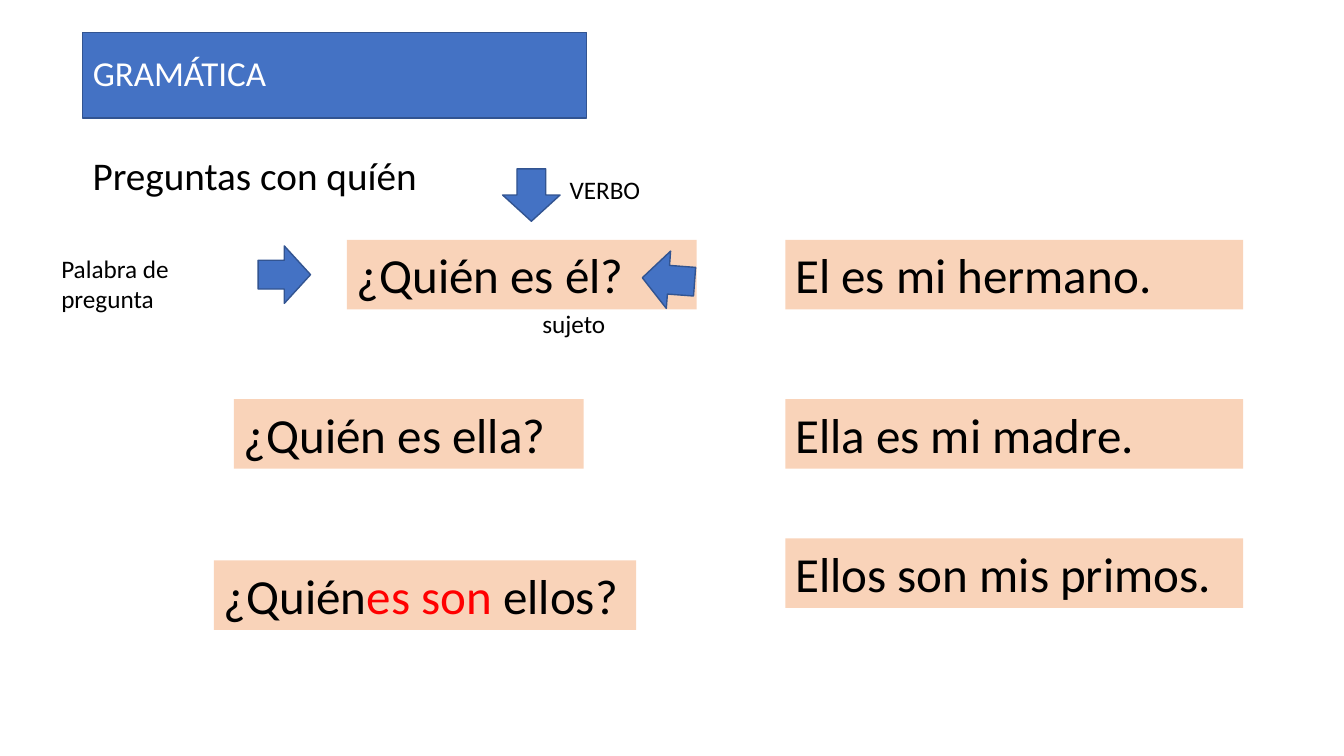
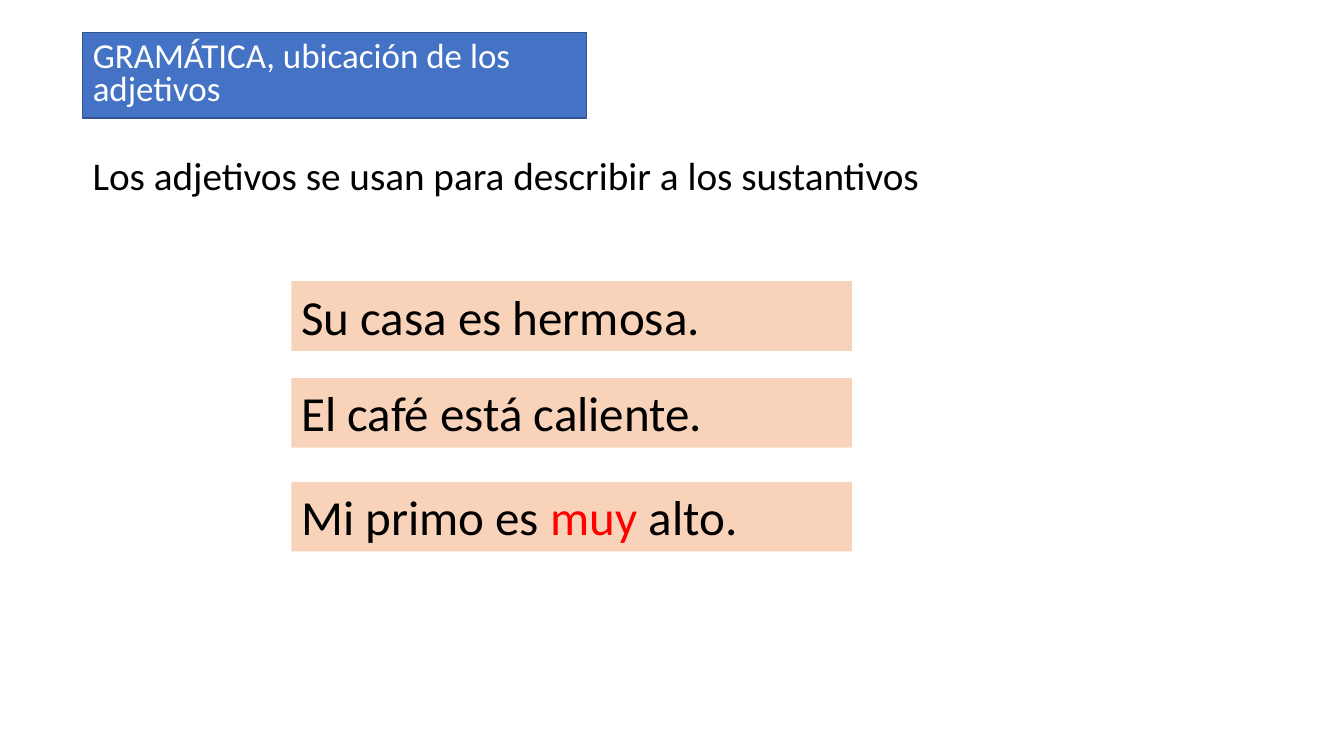
from dataclasses import dataclass

from pptx import Presentation
from pptx.dml.color import RGBColor
from pptx.enum.shapes import MSO_SHAPE
from pptx.enum.text import MSO_ANCHOR, MSO_AUTO_SIZE, PP_ALIGN
from pptx.util import Inches, Pt

RECTANGLE = MSO_SHAPE.RECTANGLE
RIGHT_ARROW = MSO_SHAPE.RIGHT_ARROW
TOP, MIDDLE = MSO_ANCHOR.TOP, MSO_ANCHOR.MIDDLE
LEFT = PP_ALIGN.LEFT
NO_AUTOFIT = MSO_AUTO_SIZE.NONE
TITLE_ONLY = 5


@dataclass(frozen=True)
class Theme:
    font: str = "Calibri"
    blue: RGBColor = RGBColor(0x44, 0x72, 0xC4)
    outline: RGBColor = RGBColor(0x32, 0x54, 0x91)
    peach: RGBColor = RGBColor(0xF9, 0xD3, 0xB9)
    black: RGBColor = RGBColor(0, 0, 0)
    white: RGBColor = RGBColor(0xFF, 0xFF, 0xFF)
    red: RGBColor = RGBColor(0xFF, 0, 0)
    title_size: int = 25
    topic_size: int = 28
    sentence_size: int = 35
    label_size: int = 18


THEME = Theme()
SENTENCE_HEIGHT = 0.69


def write(shape, runs, size, anchor=TOP, line_spacing=1.0):
    frame = shape.text_frame
    frame.word_wrap = True
    frame.auto_size = NO_AUTOFIT
    frame.vertical_anchor = anchor
    paragraph = frame.paragraphs[0]
    paragraph.alignment = LEFT
    paragraph.line_spacing = line_spacing
    for text, color in runs:
        run = paragraph.add_run()
        run.text = text
        run.font.name = THEME.font
        run.font.size = Pt(size)
        run.font.color.rgb = color


def paint_blue(shape):
    shape.fill.solid()
    shape.fill.fore_color.rgb = THEME.blue
    shape.line.color.rgb = THEME.outline
    shape.line.width = Pt(1)


def add_text(slide, text, box, size, line_spacing=1.0):
    text_box = slide.shapes.add_textbox(*map(Inches, box))
    write(text_box, [(text, THEME.black)], size, line_spacing=line_spacing)


def add_label(slide, text, left, top, width=1.11, height=0.4):
    add_text(slide, text, (left, top, width, height), THEME.label_size)


def add_sentence(slide, left, top, width, start, stressed="", end=""):
    box = map(Inches, (left, top, width, SENTENCE_HEIGHT))
    panel = slide.shapes.add_shape(RECTANGLE, *box)
    panel.shadow.inherit = False
    panel.fill.solid()
    panel.fill.fore_color.rgb = THEME.peach
    panel.line.fill.background()
    parts = [(start, THEME.black), (stressed, THEME.red), (end, THEME.black)]
    write(panel, [part for part in parts if part[0]], THEME.sentence_size)


def add_arrow(slide, left, top, rotation=0):
    box = map(Inches, (left, top, 0.52, 0.57))
    arrow = slide.shapes.add_shape(RIGHT_ARROW, *box)
    arrow.shadow.inherit = False
    arrow.rotation = rotation
    paint_blue(arrow)


def add_grammar_slide(prs, heading, topic, heading_spacing):
    slide = prs.slides.add_slide(prs.slide_layouts[TITLE_ONLY])
    title = slide.shapes.title
    title.left, title.top = Inches(0.82), Inches(0.32)
    title.width, title.height = Inches(5), Inches(0.85)
    paint_blue(title)
    write(title, [(heading, THEME.white)], THEME.title_size, MIDDLE, heading_spacing)
    add_text(slide, topic, (0.82, 1.5, 9.47, 1.08), THEME.topic_size, 0.9)
    return slide


def build_questions(prs):
    slide = add_grammar_slide(prs, "GRAMÁTICA", "Preguntas con quíén", 0.9)
    questions = [
        (3.44, 2.38, 3.47, "¿Quién es él?"),
        (2.32, 3.96, 3.47, "¿Quién es ella?"),
        (2.12, 5.56, 4.19, "¿Quién", "es son ", "ellos?"),
    ]
    for question in questions:
        add_sentence(slide, *question)
    answers = [
        (2.38, "El es mi hermano."),
        (3.96, "Ella es mi madre."),
        (5.34, "Ellos son mis primos."),
    ]
    for top, answer in answers:
        add_sentence(slide, 7.79, top, 4.54, answer)
    for arrow in [(2.56, 2.44), (5.01, 1.65, 90), (6.37, 2.49, 184.3)]:
        add_arrow(slide, *arrow)
    add_label(slide, "VERBO", 5.55, 1.68)
    add_label(slide, "Palabra de pregunta", 0.51, 2.46, 1.86, 0.71)
    add_label(slide, "sujeto", 5.28, 3.01)


def build_adjectives(prs):
    slide = add_grammar_slide(
        prs,
        "GRAMÁTICA, ubicación de los adjetivos",
        "Los adjetivos se usan para describir a los sustantivos",
        0.8,
    )
    examples = [
        (2.79, "Su casa es hermosa."),
        (3.75, "El café está caliente."),
        (4.78, "Mi primo es ", "muy", " alto."),
    ]
    for top, *parts in examples:
        add_sentence(slide, 2.89, top, 5.56, *parts)


def main():
    prs = Presentation()
    prs.slide_width, prs.slide_height = Inches(13.33), Inches(7.5)
    build_questions(prs)
    build_adjectives(prs)
    prs.save("out.pptx")


if __name__ == "__main__":
    main()
